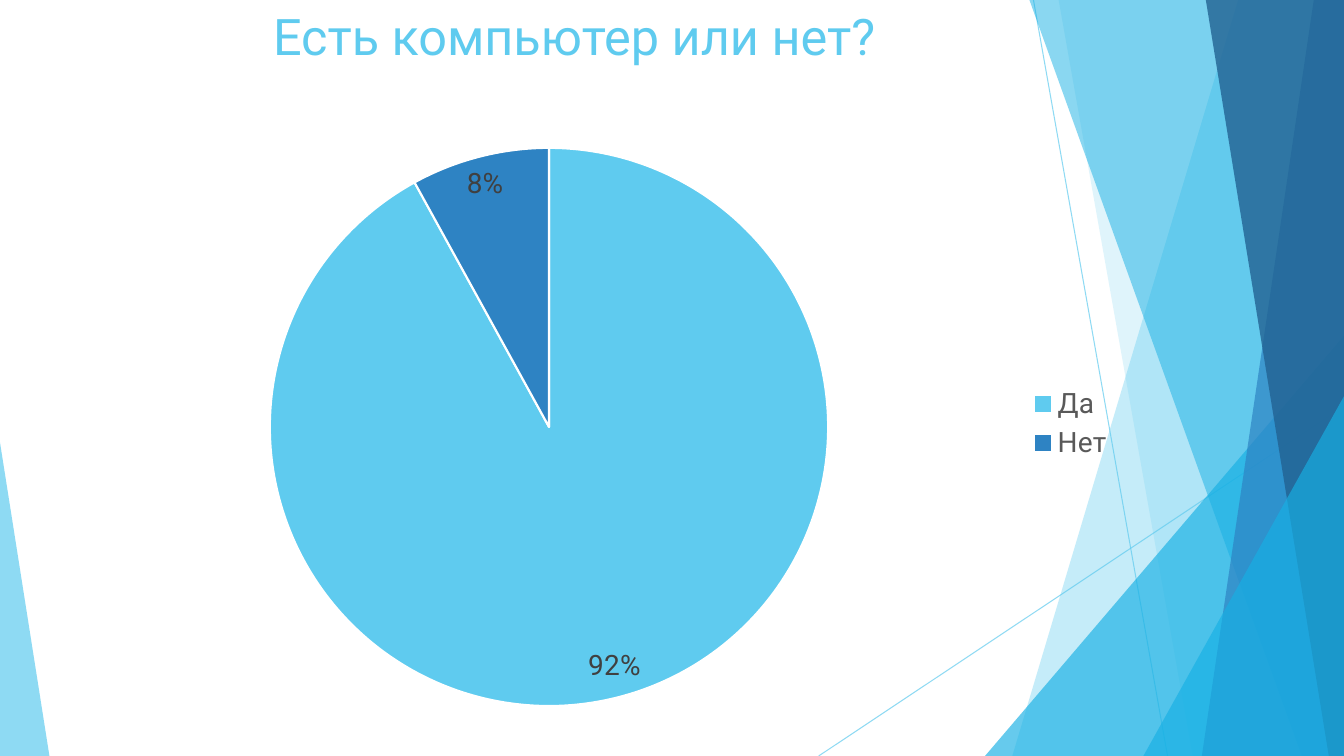
from lxml.etree import SubElement
from pptx import Presentation
from pptx.chart.data import CategoryChartData
from pptx.dml.color import RGBColor
from pptx.enum.chart import XL_CHART_TYPE, XL_LABEL_POSITION, XL_LEGEND_POSITION
from pptx.enum.shapes import MSO_CONNECTOR, MSO_SHAPE
from pptx.enum.text import MSO_ANCHOR, PP_ALIGN
from pptx.oxml.ns import qn
from pptx.util import Inches, Pt

WIDTH, HEIGHT = 13.33, 7.5
FONT = "Roboto"
COLORS = {
    "sky": "5FCBEF", "cyan": "17B0E4", "blue": "2E83C3", "navy": "226292",
    "white": "FFFFFF", "label": "404040", "legend": "595959",
}
TITLE = "Есть компьютер или нет?"
TITLE_BOX = (2.61, 0, 9.4, 1.44)
ANSWERS = [("Да", 0.92, "sky"), ("Нет", 0.08, "blue")]
CHART_BOX = (0.74, 0.9, 10.41, 6.6)
PIE_LAYOUT = {"x": 0.186, "y": 0.086, "w": 0.532, "h": 0.839}

RAYS = [((10.25, 0), (11.58, HEIGHT)), ((WIDTH, 4.03), (8.12, HEIGHT))]
FACETS = [
    ("band", (12.28, 10.04), "sky", 36),
    ("band", (10.5, 11.83), "sky", 20),
    ("triangle", (9.77, 3.33, 3.56, 1), "cyan", 66),
    ("band", (10.21, 12.91), "cyan", 50),
    ("band", (13.03, 11.92), "blue", 70),
    ("band", (11.96, 13.18), "navy", 80),
    ("triangle", (11.34, 3.93, 1.99, 1), "cyan", 66),
    ("triangle", (0, 4.39, 0.49, 0), "sky", 70),
]


def rgb(name):
    return RGBColor.from_string(COLORS[name])


def set_all(target, **values):
    for key, value in values.items():
        setattr(target, key, value)


def style_font(font, size, color):
    set_all(font, name=FONT, size=Pt(size))
    font.color.rgb = rgb(color)


def paint(fill, color, opacity=100):
    fill.solid()
    fill.fore_color.rgb = rgb(color)
    if opacity < 100:
        srgb = fill._xPr.find(f".//{qn('a:srgbClr')}")
        SubElement(srgb, qn("a:alpha"), val=str(opacity * 1000))


def draw_ray(shapes, start, end):
    ray = shapes.add_connector(
        MSO_CONNECTOR.STRAIGHT, *map(Inches, (*start, *end)))
    ray.line.width = Pt(0.75)
    paint(ray.line.fill, "sky", 70)
    SubElement(ray._element.spPr, qn("a:effectLst"))


def draw_facet(shapes, kind, geometry, color, opacity):
    if kind == "band":
        top, bottom = geometry
        outline = shapes.build_freeform(Inches(top), 0)
        corners = [(WIDTH, 0), (WIDTH, HEIGHT), (bottom, HEIGHT)]
        outline.add_line_segments(
            [(Inches(x), Inches(y)) for x, y in corners], close=True)
        facet = outline.convert_to_shape()
    else:
        left, top, width, apex = geometry
        facet = shapes.add_shape(
            MSO_SHAPE.ISOSCELES_TRIANGLE,
            *map(Inches, (left, top, width, HEIGHT - top)))
        facet.adjustments[0] = apex
    paint(facet.fill, color, opacity)
    facet.line.fill.background()
    facet.shadow.inherit = False


def write_title(shapes):
    frame = shapes.add_textbox(*map(Inches, TITLE_BOX)).text_frame
    set_all(frame, word_wrap=True, vertical_anchor=MSO_ANCHOR.TOP)
    paragraph = frame.paragraphs[0]
    paragraph.alignment = PP_ALIGN.LEFT
    run = paragraph.add_run()
    run.text = TITLE
    style_font(run.font, 36, "sky")


def draw_pie(shapes):
    answers = CategoryChartData(number_format="0%")
    answers.categories = [name for name, _, _ in ANSWERS]
    answers.add_series("Series 1", [share for _, share, _ in ANSWERS])
    chart = shapes.add_chart(
        XL_CHART_TYPE.PIE, *map(Inches, CHART_BOX), answers).chart
    set_all(chart, has_title=False, has_legend=True)
    chart.font.name = FONT
    set_all(chart.legend, position=XL_LEGEND_POSITION.RIGHT,
            include_in_layout=False)
    style_font(chart.legend.font, 20, "legend")

    pie = chart.plots[0]
    set_all(pie, vary_by_categories=True, has_data_labels=True)
    set_all(pie.data_labels, show_value=True, show_percentage=False,
            number_format="0%", number_format_is_linked=False,
            position=XL_LABEL_POSITION.BEST_FIT)
    style_font(pie.data_labels.font, 20, "label")
    for index, (_, _, color) in enumerate(ANSWERS):
        slice_format = pie.series[0].points[index].format
        paint(slice_format.fill, color)
        paint(slice_format.line.fill, "white")
        slice_format.line.width = Pt(1.5)

    plot_area = chart._chartSpace.chart.plotArea
    for old in plot_area.findall(qn("c:layout")):
        plot_area.remove(old)
    layout = SubElement(plot_area, qn("c:layout"))
    plot_area.insert(0, layout)
    manual = SubElement(layout, qn("c:manualLayout"))
    settings = {"layoutTarget": "inner", "xMode": "edge", "yMode": "edge",
                **PIE_LAYOUT}
    for tag, value in settings.items():
        SubElement(manual, qn(f"c:{tag}"), val=str(value))


def main():
    deck = Presentation()
    set_all(deck, slide_width=Inches(WIDTH), slide_height=Inches(HEIGHT))
    slide = deck.slides.add_slide(deck.slide_layouts[6])
    paint(slide.background.fill, "white")
    for ray in RAYS:
        draw_ray(slide.shapes, *ray)
    for facet in FACETS:
        draw_facet(slide.shapes, *facet)
    write_title(slide.shapes)
    draw_pie(slide.shapes)
    deck.save("out.pptx")


if __name__ == "__main__":
    main()
